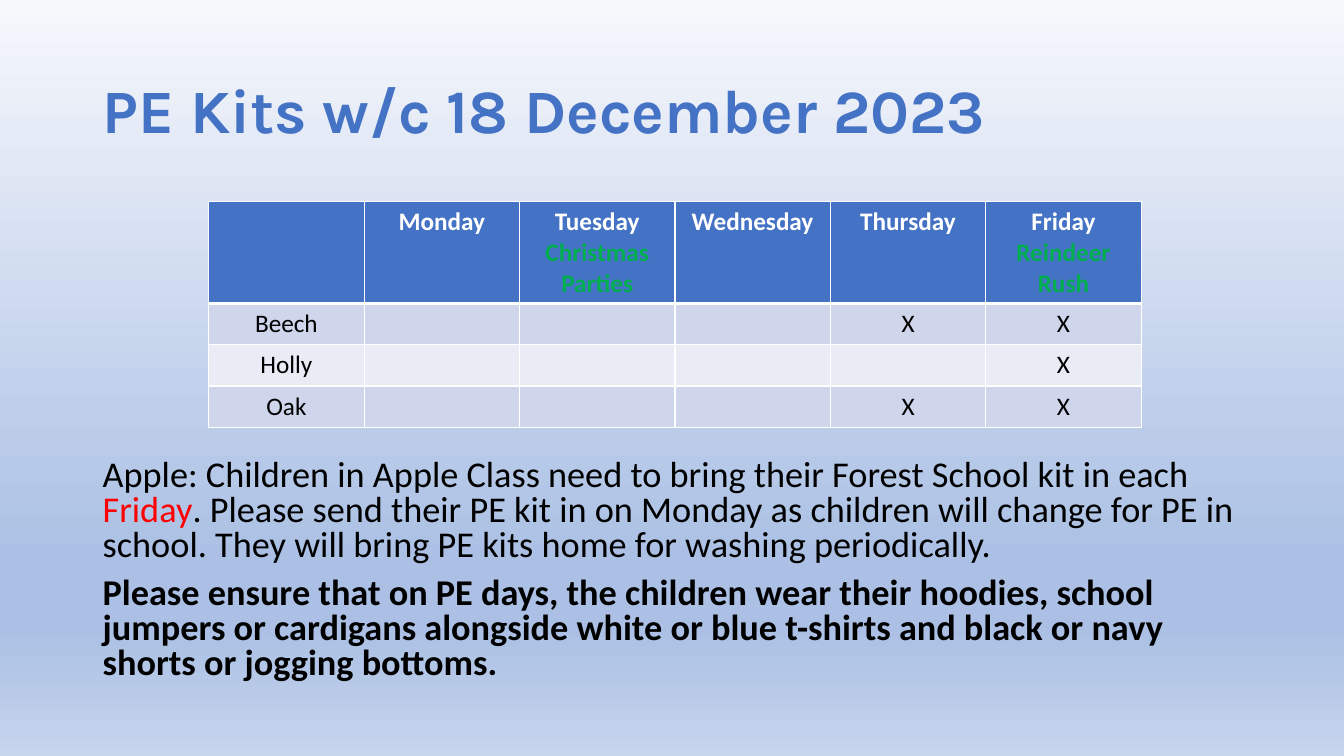
from lxml import etree
from pptx import Presentation
from pptx import util as u
from pptx.dml.color import RGBColor
from pptx.enum import text
from pptx.oxml.ns import qn

COLORS = {"blue": "4472C4", "green": "00B050", "red": "FF0000", "black": "000000",
          "white": "FFFFFF", "band": "CFD5EA", "pale": "E9EBF5"}
BACKDROP = [(0, "F6F8FC"), (74, "ABC0E4"), (83, "ABC0E4"), (100, "C7D5ED")]
DAYS = ["", "Monday", "Tuesday\nChristmas Parties", "Wednesday", "Thursday",
        "Friday\nReindeer Rush"]
KITS = [DAYS,
        ["Beech", "", "", "", "X", "X"],
        ["Holly", "", "", "", "", "X"],
        ["Oak", "", "", "", "X", "X"]]
NOTICE = [
    (False, [("Apple: Children in Apple Class need to bring their Forest School kit in each ", "black"),
             ("Friday", "red"),
             (". Please send their PE kit in on Monday as children will change for PE in school. "
              "They will bring PE kits home for washing periodically.", "black")]),
    (True, [("Please ensure that on PE days, the children wear their hoodies, school jumpers or "
             "cardigans alongside white or blue t-shirts and black or navy shorts or jogging "
             "bottoms.", "black")]),
]


def style(font, name, size, color, bold):
    font.name, font.size, font.bold = name, u.Pt(size), bold
    font.color.rgb = RGBColor.from_string(COLORS[color])


def add_border(cell, side, points):
    line = etree.SubElement(cell._tc.get_or_add_tcPr(), qn(f"a:ln{side}"), w=str(u.Pt(points)))
    fill = etree.SubElement(line, qn("a:solidFill"))
    etree.SubElement(fill, qn("a:srgbClr"), val=COLORS["white"])


deck = Presentation()
deck.slide_width, deck.slide_height = u.Inches(13.33), u.Inches(7.5)
slide = deck.slides.add_slide(deck.slide_layouts[6])
left, content_width = u.Inches(0.92), u.Inches(11.5)

backdrop = slide.background.fill
backdrop.gradient()
backdrop.gradient_angle = 270
stops = slide.element.find(".//" + qn("a:gsLst"))
for stop in list(stops):
    stops.remove(stop)
for percent, color in BACKDROP:
    stop = etree.SubElement(stops, qn("a:gs"), pos=str(percent * 1000))
    etree.SubElement(stop, qn("a:srgbClr"), val=color)

title = slide.shapes.add_textbox(left, u.Inches(0.4), content_width, u.Inches(1.45)).text_frame
title.word_wrap = True
title.vertical_anchor = text.MSO_ANCHOR.MIDDLE
heading = title.paragraphs[0]
heading.text = "PE Kits w/c 18 December 2023"
heading.line_spacing = 0.9
style(heading.font, "Karla", 44, "blue", True)

row_height, header_height = u.Inches(0.41), u.Inches(1.01)
timetable = slide.shapes.add_table(len(KITS), len(DAYS), u.Inches(2.07), u.Inches(2),
                                   u.Inches(9.25), header_height + 3 * row_height).table
for r, entries in enumerate(KITS):
    header = r == 0
    timetable.rows[r].height = header_height if header else row_height
    for c, entry in enumerate(entries):
        cell = timetable.cell(r, c)
        for side in "LRTB":
            thick = (header and side == "B") or (r == 1 and side == "T")
            add_border(cell, side, 3 if thick else 1)
        cell.fill.solid()
        shade = "blue" if header else ("band" if r % 2 else "pale")
        cell.fill.fore_color.rgb = RGBColor.from_string(COLORS[shade])
        cell.text = entry
        for i, line in enumerate(cell.text_frame.paragraphs):
            line.alignment = text.PP_ALIGN.CENTER
            color = ("green" if i else "white") if header else "black"
            style(line.font, "Calibri", 18, color, header)

notice = slide.shapes.add_textbox(left, u.Inches(4.51), content_width, u.Inches(2.25)).text_frame
notice.word_wrap = True
for i, (bold, pieces) in enumerate(NOTICE):
    paragraph = notice.add_paragraph() if i else notice.paragraphs[0]
    paragraph.line_spacing = 0.8
    paragraph.space_before = u.Pt(10 if i else 0)
    style(paragraph.font, "Calibri", 25.9, "black", bold)
    for words, color in pieces:
        run = paragraph.add_run()
        run.text = words
        run.font.color.rgb = RGBColor.from_string(COLORS[color])

deck.save("out.pptx")
